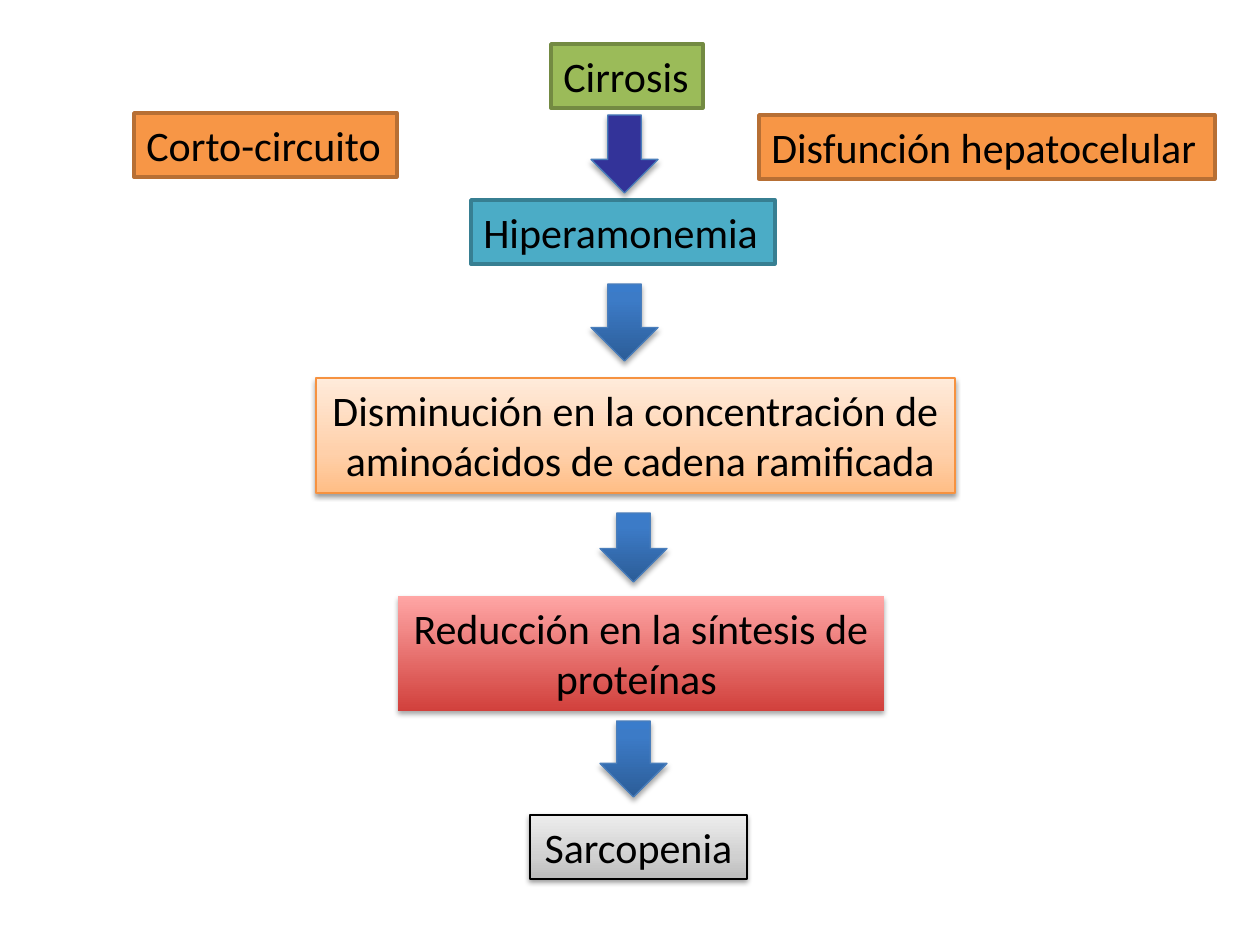
import pptx
import pptx.util
import pptx.dml.color
import pptx.enum.shapes
import pptx.enum.text
import pptx.oxml.ns
from dataclasses import dataclass
from lxml import etree

SHAPE = pptx.enum.shapes.MSO_SHAPE
ALIGN = pptx.enum.text.PP_ALIGN


@dataclass(frozen=True)
class Theme:
    font: str = "Calibri"
    size: int = 24
    text: str = "000000"
    green: tuple = ("9BBB59",)
    green_line: str = "738A42"
    orange: tuple = ("F79646",)
    orange_line: str = "B76F34"
    teal: tuple = ("4BACC6",)
    teal_line: str = "377F92"
    peach: tuple = ((0, "FFEBDB"), (65, "FFD0AA"), (100, "FFBE86"))
    peach_line: str = "F69240"
    red: tuple = ((0, "FFA6A5"), (100, "D1403C"))
    gray: tuple = ((0, "EDEDED"), (65, "D0D0D0"), (100, "BCBCBC"))
    blue: tuple = ((0, "3A7CCB"), (20, "3C7BC7"), (100, "2C5D98"))
    blue_line: str = "4A7EBB"
    indigo: tuple = ("333399",)
    thick: float = 2
    thin: float = 0.75
    soft_shadow: tuple = (38, 1.6)
    deep_shadow: tuple = (35, 1.8)
    blur: float = 3.1


def px(n):
    return pptx.util.Emu(round(n * 914400 / 126))


def rgb(color):
    return pptx.dml.color.RGBColor.from_string(color)


def add_xml(parent, tag, **attrs):
    return etree.SubElement(parent, pptx.oxml.ns.qn(tag), {k: str(v) for k, v in attrs.items()})


class Diagram:
    def __init__(self, prs, theme):
        self.theme = theme
        self.s = prs.slides.add_slide(prs.slide_layouts[6])

    def shape(self, kind, at, fill, line, width, shadow):
        sp = self.s.shapes.add_shape(kind, *map(px, at))
        if len(fill) == 1:
            sp.fill.solid()
            sp.fill.fore_color.rgb = rgb(fill[0])
        else:
            self.gradient(sp, fill)
        if line:
            sp.line.color.rgb = rgb(line)
            sp.line.width = pptx.util.Pt(width)
        else:
            sp.line.fill.background()
        sp.shadow.inherit = False
        if shadow:
            self.shadow(sp, *shadow)
        return sp

    def gradient(self, sp, stops):
        sp.fill.gradient()
        sp.fill.gradient_angle = 270
        stop_list = sp._element.spPr.find(".//" + pptx.oxml.ns.qn("a:gsLst"))
        for old in list(stop_list):
            stop_list.remove(old)
        for pos, color in stops:
            add_xml(add_xml(stop_list, "a:gs", pos=pos * 1000), "a:srgbClr", val=color)

    def shadow(self, sp, alpha, dist):
        effects = sp._element.spPr.find(pptx.oxml.ns.qn("a:effectLst"))
        outer = add_xml(effects, "a:outerShdw", blurRad=pptx.util.Pt(self.theme.blur),
                        dist=pptx.util.Pt(dist), dir=5400000, rotWithShape=0)
        add_xml(add_xml(outer, "a:srgbClr", val="000000"), "a:alpha", val=alpha * 1000)

    def box(self, lines, at, fill, line=None, width=None, shadow=None, align=ALIGN.LEFT):
        sp = self.shape(SHAPE.RECTANGLE, at, fill, line, width, shadow)
        tf = sp.text_frame
        tf.word_wrap = False
        tf.auto_size = pptx.enum.text.MSO_AUTO_SIZE.SHAPE_TO_FIT_TEXT
        tf.vertical_anchor = pptx.enum.text.MSO_ANCHOR.TOP
        tf.text = lines
        for p in tf.paragraphs:
            p.alignment = align
            p.font.name = self.theme.font
            p.font.size = pptx.util.Pt(self.theme.size)
            p.font.color.rgb = rgb(self.theme.text)

    def arrow(self, left, top, height, fill):
        t = self.theme
        self.shape(SHAPE.DOWN_ARROW, (left, top, 67, height), fill, t.blue_line, t.thin, t.deep_shadow)


def main():
    prs = pptx.Presentation()
    prs.slide_width, prs.slide_height = px(1260), px(945)
    t = Theme()
    d = Diagram(prs, t)

    d.box("Cirrosis", (551, 44, 152, 64), t.green, t.green_line, t.thick)
    d.box("Corto-circuito", (134, 113, 263, 64), t.orange, t.orange_line, t.thick)
    d.box("Disfunción hepatocelular", (759, 115, 456, 64), t.orange, t.orange_line, t.thick)
    d.box("Hiperamonemia", (471, 200, 304, 64), t.teal, t.teal_line, t.thick)
    d.box("Disminución en la concentración de\n aminoácidos de cadena ramificada",
          (316, 378, 639, 115), t.peach, t.peach_line, t.thin, t.soft_shadow, ALIGN.CENTER)
    d.box("Reducción en la síntesis de\nproteínas ", (398, 596, 486, 115), t.red,
          shadow=t.deep_shadow, align=ALIGN.CENTER)
    d.box("Sarcopenia", (530, 815, 217, 64), t.gray, t.text, t.thin, t.soft_shadow, ALIGN.CENTER)

    for left, top, height, fill in (
        (591, 115, 78, t.indigo),
        (591, 284, 77, t.blue),
        (600, 513, 69, t.blue),
        (600, 721, 76, t.blue),
    ):
        d.arrow(left, top, height, fill)

    prs.save("out.pptx")


if __name__ == "__main__":
    main()
